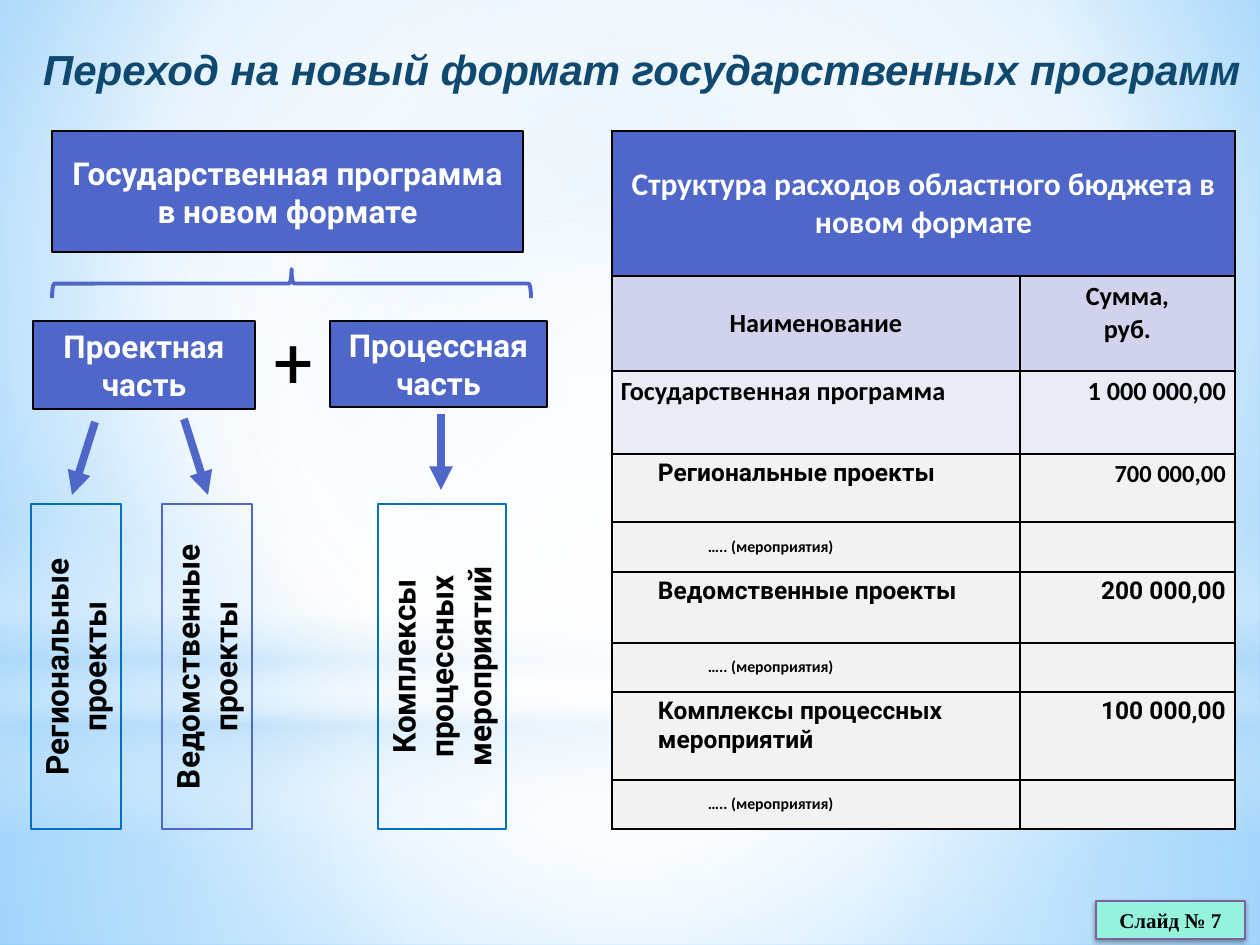
from lxml import etree
from pptx import Presentation, util as u
from pptx.dml.color import RGBColor
from pptx.enum import shapes, text
from pptx.oxml import ns, parse_xml

KIND, ALIGN, MID = shapes.MSO_SHAPE, text.PP_ALIGN, text.MSO_ANCHOR.MIDDLE
BLUE, EDGE, SKY, WHITE, BLACK = "4E67C8", "0070C0", "B4DCFA", "FFFFFF", "000000"
GREY = "F2F2F2"
HEAD = dict(size=18, name="Roboto", bold=True, color=WHITE)
SIDE = dict(HEAD, color=BLACK)
CELL = dict(size=15, name="Calibri", bold=True, color=BLACK)
ITEM = dict(CELL, size=14, name="Roboto")
NOTE = dict(CELL, size=9)


def px(n):
    return u.Emu(round(n * 914400 / 126))


def rgb(code):
    return RGBColor.from_string(code)


def node(body):
    return parse_xml(body.replace(">", f" {ns.nsdecls('a')}>", 1)
                     if "/>" not in body.split(">")[0] + ">"
                     else body.replace("/>", f" {ns.nsdecls('a')}/>", 1))


def blend(fill, owner, stops, focus=None, angle=0):
    """Swap a solid fill for a radial or a linear gradient."""
    fill.solid()
    marks = "".join(
        f'<a:gs pos="{pos * 1000}"><a:srgbClr val="{code}">'
        f'<a:alpha val="{(rest or [100])[0] * 1000}"/></a:srgbClr></a:gs>'
        for pos, code, *rest in stops)
    if focus:
        sides = " ".join(f'{k}="{v * 1000}"' for k, v in zip("ltrb", focus))
        way = f'<a:path path="circle"><a:fillToRect {sides}/></a:path>'
    else:
        way = f'<a:lin ang="{angle * 60000}" scaled="0"/>'
    grad = node(f'<a:gradFill rotWithShape="1"><a:gsLst>{marks}</a:gsLst>{way}</a:gradFill>')
    owner.replace(owner.find(ns.qn("a:solidFill")), grad)


def write(frame, words, font, align=ALIGN.CENTER, anchor=None):
    frame.word_wrap = True
    if anchor is not None:
        frame.vertical_anchor = anchor
    for i, line in enumerate(words.split("\n")):
        para = frame.paragraphs[0] if i == 0 else frame.add_paragraph()
        para.alignment = align
        run = para.add_run()
        run.text = line
        for key, val in font.items():
            if key == "color":
                run.font.color.rgb = rgb(val)
            else:
                setattr(run.font, key, u.Pt(val) if key == "size" else val)


def shape(slide, kind, box, fill=None, line=None, width=1, turn=0):
    """Add a shape; box is the frame as seen after the turn."""
    x, y, w, h = box
    if turn:
        x, y, w, h = x + (w - h) / 2, y + (h - w) / 2, h, w
    item = slide.shapes.add_shape(kind, *map(px, (x, y, w, h)))
    item.rotation = turn
    item.shadow.inherit = False
    if fill:
        item.fill.solid()
        item.fill.fore_color.rgb = rgb(fill)
    else:
        item.fill.background()
    if line:
        item.line.color.rgb = rgb(line)
        item.line.width = u.Pt(width)
    else:
        item.line.fill.background()
    return item


def label(slide, box, words, font, align=ALIGN.CENTER):
    write(slide.shapes.add_textbox(*map(px, box)).text_frame, words, font, align)


def arrow(slide, *ends):
    item = slide.shapes.add_connector(shapes.MSO_CONNECTOR.STRAIGHT, *map(px, ends))
    item.line.color.rgb = rgb(BLUE)
    item.line.width = u.Pt(4.5)
    item.line._get_or_add_ln().append(node('<a:tailEnd type="triangle"/>'))
    item.element.spPr.append(node("<a:effectLst/>"))


def cell(grid, row, col, fill, words="", font=CELL, align=ALIGN.CENTER,
         anchor=None, left=0, first=0):
    box = grid.cell(row, col)
    for key, val in dict(left=9, right=9, top=5, bottom=5).items():
        setattr(box, f"margin_{key}", px(val))
    props = box._tc.get_or_add_tcPr()
    for side in "LRTB":
        props.append(node(f'<a:ln{side} w="12700"><a:solidFill><a:srgbClr val="{BLACK}"/>'
                          f"</a:solidFill></a:ln{side}>"))
    box.fill.solid()
    box.fill.fore_color.rgb = rgb(fill)
    if not words:
        return
    write(box.text_frame, words, font, align)
    if anchor is not None:
        box.vertical_anchor = anchor
    for para in box.text_frame.paragraphs:
        props = para._p.get_or_add_pPr()
        props.set("marL", str(px(left)))
        props.set("indent", str(px(first)))


def backdrop(slide):
    back = slide.background.fill
    back.solid()
    blend(back, slide.element.find(".//" + ns.qn("p:bgPr")),
          [(0, SKY), (60, WHITE), (100, "5BB9FF")], (20, 10, 20, 60))
    mid = (50, 50, 50, 50)
    layers = [
        (KIND.RECTANGLE, (0, 703, 1260, 242), mid,
         [(0, WHITE, 91), (37, WHITE, 76), (100, SKY, 79)]),
        (KIND.RECTANGLE, (0, 0, 1260, 703), mid,
         [(0, WHITE, 89), (48, WHITE, 62), (100, SKY, 79)]),
        (KIND.RECTANGLE, (0, 519, 1260, 315), None,
         [(0, WHITE, 0), (29, WHITE, 30), (45, SKY, 40),
          (55, WHITE, 26), (65, SKY, 60), (100, WHITE, 0)]),
        (KIND.OVAL, (0, 220, 1260, 703), mid, [(0, WHITE), (56, WHITE, 0)]),
    ]
    for kind, box, focus, stops in layers:
        item = shape(slide, kind, box)
        blend(item.fill, item.element.spPr, stops, focus, 90)


def scheme(slide):
    # Programme and its two parts
    for box, words in [
            ((52, 131, 471, 121), "Государственная программа в новом формате"),
            ((33, 321, 222, 88), "Проектная часть"),
            ((330, 321, 217, 86), "Процессная часть")]:
        item = shape(slide, KIND.FLOWCHART_PROCESS, box, BLUE, BLACK, 1.25)
        write(item.text_frame, words, HEAD, anchor=MID)
    label(slide, (261, 311, 63, 98), "+",
          dict(size=40.5, name="Roboto", color=BLACK), ALIGN.LEFT)
    shape(slide, KIND.LEFT_BRACE, (52, 269, 479, 29), None, BLUE, 2.25, 90)
    # Upright boxes
    for x, w, line, words in [
            (31, 90, EDGE, "Региональные проекты"),
            (162, 90, BLUE, "Ведомственные проекты"),
            (378, 128, EDGE, "Комплексы процессных мероприятий")]:
        item = shape(slide, KIND.RECTANGLE, (x, 504, w, 325), None, line, 1.5, 270)
        write(item.text_frame, words, SIDE, anchor=text.MSO_ANCHOR.TOP)
    for ends in [(95, 422, 72, 495), (184, 419, 208, 495), (441, 414, 441, 490)]:
        arrow(slide, *ends)


def budget(slide):
    rows = [145, 95, 83, 68, 50, 71, 49, 88, 49]
    cols = [408, 215]
    grid = slide.shapes.add_table(
        len(rows), len(cols), *map(px, (612, 131, sum(cols), sum(rows)))).table
    grid.first_row = grid.horz_banding = False
    for parts, sizes in ((grid.rows, rows), (grid.columns, cols)):
        for part, size in zip(parts, sizes):
            setattr(part, "height" if sizes is rows else "width", px(size))
    # Headings and total
    grid.cell(0, 0).merge(grid.cell(0, 1))
    cell(grid, 0, 0, BLUE, "Структура расходов областного бюджета в новом формате",
         dict(HEAD, name="Calibri"), anchor=MID)
    cell(grid, 0, 1, BLUE)
    cell(grid, 1, 0, "D0D3EB", "Наименование", anchor=MID)
    cell(grid, 1, 1, "D0D3EB", "Сумма,\nруб.")
    cell(grid, 2, 0, "E9EBF5", "Государственная программа", align=ALIGN.JUSTIFY)
    cell(grid, 2, 1, "E9EBF5", "1 000 000,00", align=ALIGN.RIGHT)
    # Each kind of spending, with a line for its measures
    for i, (name, sum_, font) in enumerate([
            ("Региональные проекты", "700 000,00", dict(ITEM, name="Calibri")),
            ("Ведомственные проекты", "200 000,00", ITEM),
            ("Комплексы процессных мероприятий", "100 000,00", ITEM)]):
        row = 3 + 2 * i
        cell(grid, row, 0, GREY, name, ITEM, ALIGN.LEFT, left=37)
        cell(grid, row, 1, GREY, sum_, font, ALIGN.RIGHT)
        cell(grid, row + 1, 0, GREY, "….. (мероприятия)", NOTE, ALIGN.JUSTIFY, MID, left=87)
        cell(grid, row + 1, 1, GREY)


def badge(slide):
    item = shape(slide, KIND.RECTANGLE, (1096, 901, 149, 38), None, "7D60A0", 0.75)
    blend(item.fill, item.element.spPr,
          [(97, "95F3DD"), (99, "D8CBEE"), (100, "F0EAF9")], angle=270)
    item.element.spPr.find(ns.qn("a:effectLst")).append(node(
        '<a:outerShdw blurRad="39400" dist="20300" dir="5400000" rotWithShape="0">'
        f'<a:srgbClr val="{BLACK}"><a:alpha val="38000"/></a:srgbClr></a:outerShdw>'))
    write(item.text_frame, "Слайд № 7", dict(SIDE, size=12, name="Times New Roman"))


def main():
    deck = Presentation()
    deck.slide_width, deck.slide_height = px(1260), px(945)
    slide = deck.slides.add_slide(deck.slide_layouts[6])
    backdrop(slide)
    label(slide, (24, 37, 1236, 63), "Переход на новый формат государственных программ",
          dict(size=24, name="Arial", bold=True, italic=True, color="0F496F"))
    scheme(slide)
    budget(slide)
    badge(slide)
    deck.save("out.pptx")


if __name__ == "__main__":
    main()
